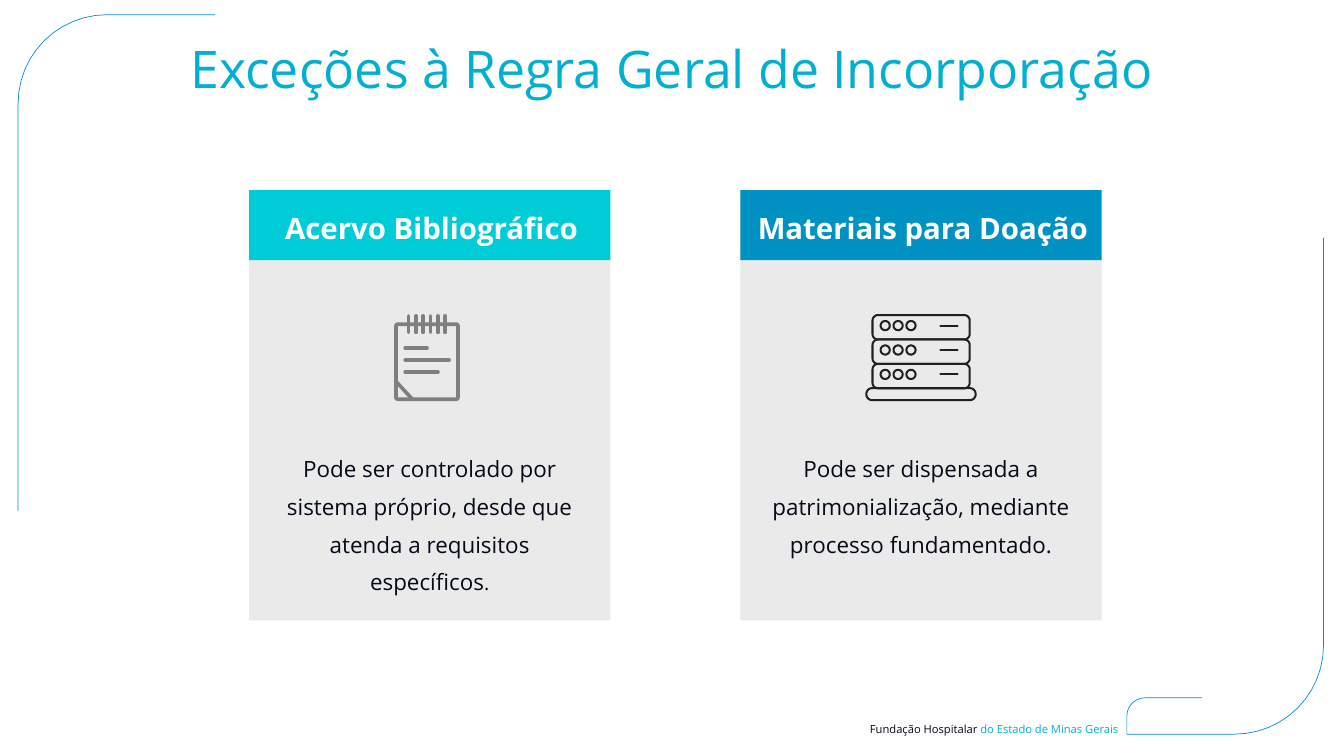
from math import cos, pi, sin

from lxml import etree
from pptx import Presentation
from pptx.dml.color import RGBColor
from pptx.enum.shapes import MSO_SHAPE as Shape
from pptx.enum.text import PP_ALIGN as Align
from pptx.oxml.ns import qn
from pptx.util import Cm, Pt

FONT = "Open Sans"
COLORS = {
    "title": "00AFD2", "frame": "008BD2", "text": "050A19", "white": "FFFFFF",
    "card": "EAEAEA", "library": "00CCD7", "donation": "0092C3",
    "notepad": "7F7F7F", "server": "231F20",
}


def color(name):
    return RGBColor.from_string(COLORS[name])


def arc(center_x, center_y, radius, start, end, steps=12):
    angles = [pi / 180 * (start + (end - start) * i / steps) for i in range(steps + 1)]
    return [(center_x + radius * cos(a), center_y + radius * sin(a)) for a in angles]


def circle(center_x, center_y, radius):
    return arc(center_x, center_y, radius, 0, 360, 36)


def rounded(left, top, width, height, radius):
    x1, y1 = left + radius, top + radius
    x2, y2 = left + width - radius, top + height - radius
    corners = [(x1, y1, 180), (x2, y1, 270), (x2, y2, 0), (x1, y2, 90)]
    points = [p for x, y, angle in corners for p in arc(x, y, radius, angle, angle + 90)]
    return points + points[:1]


def add_outline(slide, left, top, strokes, line_color, width):
    placed = [[(Cm(left + x), Cm(top + y)) for x, y in stroke] for stroke in strokes]
    builder = slide.shapes.build_freeform(*placed[0][0], scale=1.0)
    for stroke in placed:
        builder.move_to(*stroke[0])
        builder.add_line_segments(stroke[1:], close=stroke[0] == stroke[-1])
    shape = builder.convert_to_shape()
    shape.shadow.inherit = False
    shape.fill.background()
    shape.line.color.rgb = color(line_color)
    shape.line.width = Pt(width)
    line = shape.line._get_or_add_ln()
    line.set("cap", "rnd")
    etree.SubElement(line, qn("a:round"))
    return shape


def add_block(slide, left, top, width, height, fill):
    shape = slide.shapes.add_shape(Shape.RECTANGLE, Cm(left), Cm(top), Cm(width), Cm(height))
    shape.shadow.inherit = False
    shape.fill.solid()
    shape.fill.fore_color.rgb = color(fill)
    shape.line.fill.background()


def add_text(slide, left, top, width, height, runs, align=Align.CENTER, bold=False, spacing=None):
    frame = slide.shapes.add_textbox(Cm(left), Cm(top), Cm(width), Cm(height)).text_frame
    frame.word_wrap = True
    frame.margin_left = frame.margin_right = frame.margin_top = frame.margin_bottom = 0
    paragraph = frame.paragraphs[0]
    paragraph.alignment = align
    paragraph.line_spacing = spacing
    for text, size, text_color in runs:
        run = paragraph.add_run()
        run.text = text
        run.font.name = FONT
        run.font.size = Pt(size)
        run.font.bold = bold
        run.font.color.rgb = color(text_color)


def add_frame(slide):
    sweep = [(9.91, 0)] + arc(5.43, 20.51, 4.48, 0, 90)
    hook = [(0, 24.99)] + arc(0.92, 24.08, 0.92, 180, 270) + [(3.76, 23.16)]
    add_outline(slide, 56.79, 12.01, [sweep + hook], "frame", 1)
    corner = add_outline(slide, 0.91, 0.74, [sweep + hook[:1]], "frame", 1)
    corner.rotation = 180


def add_footer(slide, left, top, width, height):
    runs = [("Fundação Hospitalar ", 16, "text"), ("do Estado de Minas Gerais", 16, "title")]
    add_text(slide, left, top, width, height, runs, Align.RIGHT)


def add_notepad(slide, left, top):
    strokes = [rounded(0.09, 0.51, 3.12, 3.78, 0.09), [(0.09, 3.4), (0.91, 4.29)]]
    for i in range(6):
        x = 0.72 + 0.37 * i
        strokes.append([(x, 0.09), (x, 0.92)])
    for i, end in enumerate((1.65, 2.76, 2.2)):
        y = 1.71 + 0.6 * i
        strokes.append([(0.55, y), (end, y)])
    add_outline(slide, left + 7.32, top, strokes, "notepad", 5.25)


def add_server(slide, left, top):
    unit = 1.23
    strokes = [rounded(0.05, 3.73, 5.51, 0.61, 0.3)]
    for row in range(3):
        y = 0.05 + unit * row
        strokes.append(rounded(0.36, y, 4.9, unit, 0.28))
        strokes += [circle(1 + 0.65 * i, y + 0.53, 0.23) for i in range(3)]
        strokes.append([(3.78, y + 0.53), (4.65, y + 0.53)])
    add_outline(slide, left + 6.3, top, strokes, "server", 2.9)


def add_card(slide, left, top, width, height, header, heading, body, lines, add_icon):
    add_block(slide, left, top, width, height, "card")
    add_block(slide, left, top, width, 3.53, header)
    add_text(slide, left + 0.8, top + 1.02, 16.8, 1.8, [(heading, 42, "white")], bold=True)
    add_icon(slide, left, top + 6.25)
    runs = [(text, size, "text") for text, size in body]
    add_text(slide, left + 1.5, top + 12.83, 15.21, 1.87 * lines, runs, spacing=1.4)


def main():
    presentation = Presentation()
    presentation.slide_width, presentation.slide_height = Cm(67.73), Cm(38.1)
    slide = presentation.slides.add_slide(presentation.slide_layouts[6])
    add_frame(slide)
    add_footer(slide, 42.09, 36.4, 14.27, 0.69)
    title = "Exceções à Regra Geral de Incorporação"
    add_text(slide, 4.65, 1.85, 58.42, 3.23, [(title, 74, "title")])
    cards = [
        ("library", "Acervo Bibliográfico",
         [("Pode ser controlado por sistema próprio, desde que atenda a requisitos específicos", 32),
          (".", 28)], 4, add_notepad),
        ("donation", "Materiais para Doação",
         [("Pode ser dispensada a patrimonialização, mediante processo fundamentado.", 32)],
         3, add_server),
    ]
    for i, card in enumerate(cards):
        add_card(slide, 12.55 + 24.76 * i, 9.58, 18.21, 21.69, *card)
    presentation.save("out.pptx")


if __name__ == "__main__":
    main()
